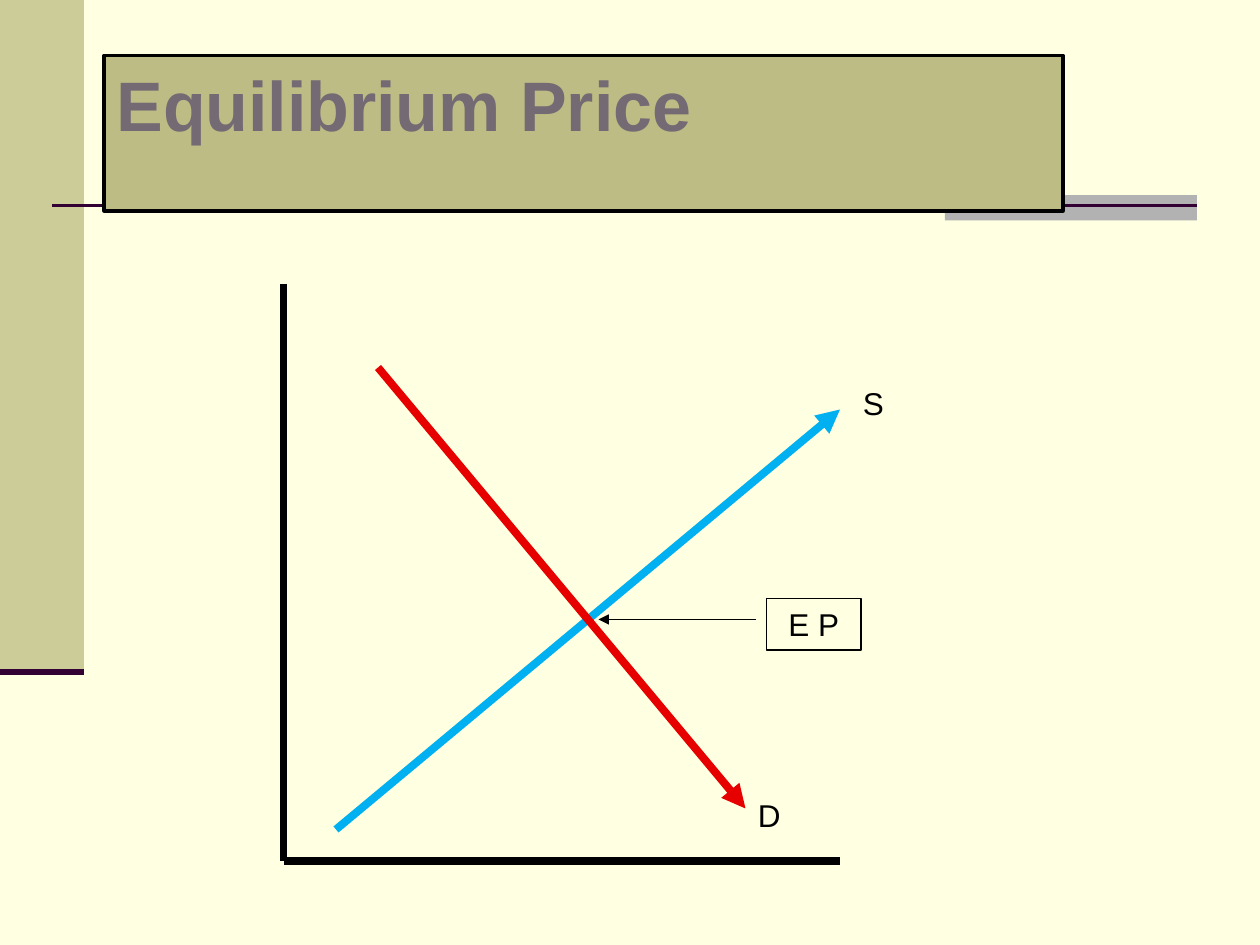
import pptx
import pptx.util
import pptx.dml.color
import pptx.enum.shapes
import pptx.enum.text
import pptx.oxml.ns
from lxml import etree

Pt = pptx.util.Pt
ALIGN = pptx.enum.text.PP_ALIGN


def color(hex_code):
    return pptx.dml.color.RGBColor.from_string(hex_code)


class SlideBuilder:
    """Holds the style and the slide being drawn; lengths are in points."""
    font = "Arial"
    black = "000000"
    plum = "330033"
    label_size = 18
    curve_width = 4.5

    def __init__(self, slide, background):
        self.slide = slide
        slide.background.fill.solid()
        slide.background.fill.fore_color.rgb = color(background)

    def rect(self, left, top, width, height, fill=None, line=None, line_width=0.75):
        shape = self.slide.shapes.add_shape(
            pptx.enum.shapes.MSO_SHAPE.RECTANGLE,
            Pt(left), Pt(top), Pt(width), Pt(height))
        shape.shadow.inherit = False
        if fill:
            shape.fill.solid()
            shape.fill.fore_color.rgb = color(fill)
        else:
            shape.fill.background()
        if line:
            shape.line.color.rgb = color(line)
            shape.line.width = Pt(line_width)
        else:
            shape.line.fill.background()
        return shape

    def line(self, start, end, hex_code, width, arrow=False):
        connector = self.slide.shapes.add_connector(
            pptx.enum.shapes.MSO_CONNECTOR.STRAIGHT,
            *(Pt(value) for value in (*start, *end)))
        connector.line.color.rgb = color(hex_code)
        connector.line.width = Pt(width)
        qn = pptx.oxml.ns.qn
        properties = connector._element.spPr
        if arrow:
            etree.SubElement(properties.find(qn("a:ln")), qn("a:tailEnd"), type="triangle")
        etree.SubElement(properties, qn("a:effectLst"))

    def set_text(self, shape, text, size=label_size, hex_code=black, bold=False,
                 align=ALIGN.LEFT):
        frame = shape.text_frame
        frame.text = text
        frame.word_wrap = True
        frame.vertical_anchor = pptx.enum.text.MSO_ANCHOR.TOP
        paragraph = frame.paragraphs[0]
        paragraph.alignment = align
        font = paragraph.runs[0].font
        font.name = self.font
        font.size = Pt(size)
        font.bold = bold
        font.color.rgb = color(hex_code)

    def label(self, text, left, top, width, height):
        box = self.slide.shapes.add_textbox(Pt(left), Pt(top), Pt(width), Pt(height))
        self.set_text(box, text)


def main():
    deck = pptx.Presentation()
    deck.slide_width, deck.slide_height = Pt(720), Pt(540)
    page = SlideBuilder(deck.slides.add_slide(deck.slide_layouts[6]), "FFFFE1")

    # Side band and heading rule
    page.rect(0, 0, 48, 384, fill="CCCC99")
    page.rect(540, 111.5, 144, 14.5, fill="B2B2B2")
    page.line((30, 117.5), (684, 117.5), page.plum, 1.5)
    page.line((0, 384), (48, 384), page.plum, 3.5)

    # Axes
    origin = (162, 492)
    page.line((162, 162), origin, page.black, page.curve_width)
    page.line(origin, (480, 492), page.black, page.curve_width)

    # Supply and demand curves
    page.line((192, 474), (480, 234), "00B0F0", page.curve_width, arrow=True)
    page.line((216, 210), (426, 462), "E70000", page.curve_width, arrow=True)

    # Equilibrium point
    page.line((432, 354), (342, 354), page.black, 0.75, arrow=True)
    equilibrium = page.rect(438, 342, 54, 29.5, line=page.black)
    page.set_text(equilibrium, "E P", align=ALIGN.CENTER)

    # Title
    title = page.rect(59.5, 31.7, 548, 88.8, fill="BCBC84", line=page.black, line_width=2)
    page.set_text(title, "Equilibrium Price", size=40, hex_code="746A74", bold=True)

    # Curve labels
    page.label("D", 426, 451.5, 27.5, 29)
    page.label("S", 486, 216, 36, 29)

    deck.save("out.pptx")


if __name__ == "__main__":
    main()
